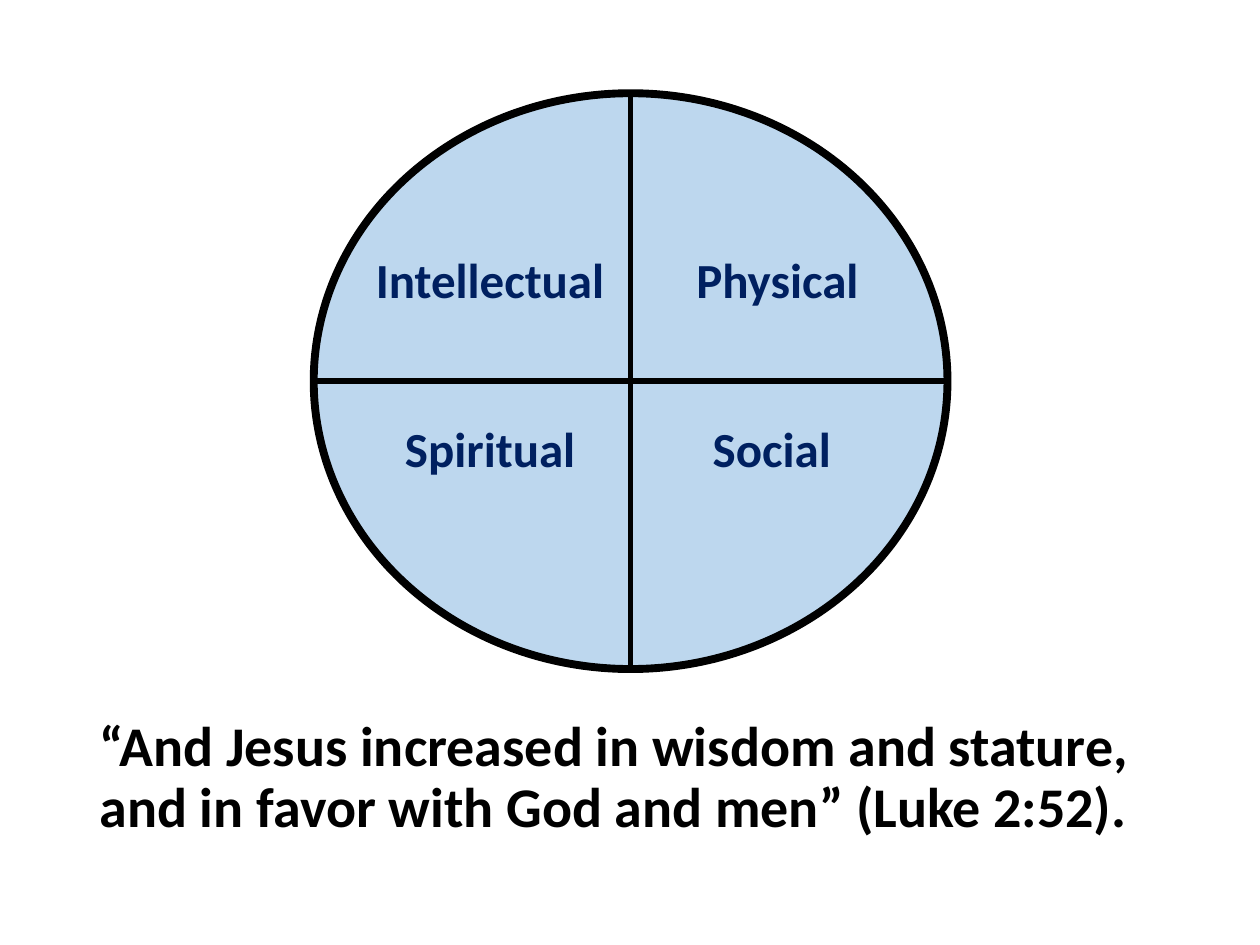
from lxml.etree import SubElement
from pptx import Presentation
from pptx.dml.color import RGBColor
from pptx.enum.shapes import MSO_CONNECTOR, MSO_SHAPE
from pptx.enum.text import MSO_AUTO_SIZE, PP_ALIGN
from pptx.oxml.ns import qn
from pptx.util import Inches, Pt

COLORS = {"black": "000000", "sky": "BDD7EE", "navy": "002060"}
FONT = "Calibri"

# Circle frame: left, top, width, height
LEFT, TOP, WIDTH, HEIGHT = 2.49, 0.74, 5.03, 4.57

# Quadrant labels: text, left, top, width
LABELS = [
    ("Intellectual", 2.86, 1.93, 2.06),
    ("Physical", 5.14, 1.93, 2.06),
    ("Spiritual", 2.86, 3.27, 2.06),
    ("Social", 5.28, 3.27, 1.69),
]
VERSE = ("“And Jesus increased in wisdom and stature, "
         "and in favor with God and men” (Luke 2:52).")


def rgb(name):
    return RGBColor.from_string(COLORS[name])


def set_font(p, size, color):
    p.font.name = FONT
    p.font.size = Pt(size)
    p.font.bold = True
    p.font.color.rgb = rgb(color)


def set_line(sp, width):
    sp.line.color.rgb = rgb("black")
    sp.line.width = Pt(width)


def add_circle(s):
    sp = s.shapes.add_shape(MSO_SHAPE.OVAL, Inches(LEFT), Inches(TOP),
                            Inches(WIDTH), Inches(HEIGHT))
    sp.shadow.inherit = False
    sp.fill.solid()
    sp.fill.fore_color.rgb = rgb("sky")
    set_line(sp, 4.5)


def add_divider(s, x1, y1, x2, y2):
    sp = s.shapes.add_connector(MSO_CONNECTOR.STRAIGHT, Inches(x1), Inches(y1),
                                Inches(x2), Inches(y2))
    set_line(sp, 3)
    SubElement(sp._element.spPr, qn("a:effectLst"))


def add_label(s, text, left, top, width):
    sp = s.shapes.add_textbox(Inches(left), Inches(top), Inches(width), Inches(0.57))
    tf = sp.text_frame
    tf.word_wrap = True
    tf.auto_size = MSO_AUTO_SIZE.SHAPE_TO_FIT_TEXT
    p = tf.paragraphs[0]
    p.text = text
    p.alignment = PP_ALIGN.CENTER
    set_font(p, 28, "navy")


def fill_verse(sp):
    sp.left, sp.top = Inches(0.69), Inches(5.65)
    sp.width, sp.height = Inches(8.62), Inches(1.1)
    tf = sp.text_frame
    tf.auto_size = MSO_AUTO_SIZE.NONE
    p = tf.paragraphs[0]
    p.text = VERSE
    p.line_spacing = 0.9
    p.space_before = Pt(10)
    set_font(p, 32, "black")
    # No bullet or hanging indent
    pPr = p._p.get_or_add_pPr()
    pPr.set("marL", "0")
    pPr.set("indent", "0")
    pPr.insert_element_before(pPr.makeelement(qn("a:buNone")), "a:defRPr")


def main():
    prs = Presentation()
    prs.slide_width, prs.slide_height = Inches(10), Inches(7.5)
    s = prs.slides.add_slide(prs.slide_layouts[1])

    # The slide has no title
    title = s.shapes.title._element
    title.getparent().remove(title)

    # Verse below the circle
    fill_verse(s.placeholders[1])

    # Circle divided into quadrants
    add_circle(s)
    mid_x, mid_y = LEFT + WIDTH / 2, TOP + HEIGHT / 2
    add_divider(s, mid_x, TOP, mid_x, TOP + HEIGHT)
    add_divider(s, LEFT, mid_y, LEFT + WIDTH, mid_y)
    for label in LABELS:
        add_label(s, *label)

    prs.save("out.pptx")


if __name__ == "__main__":
    main()
